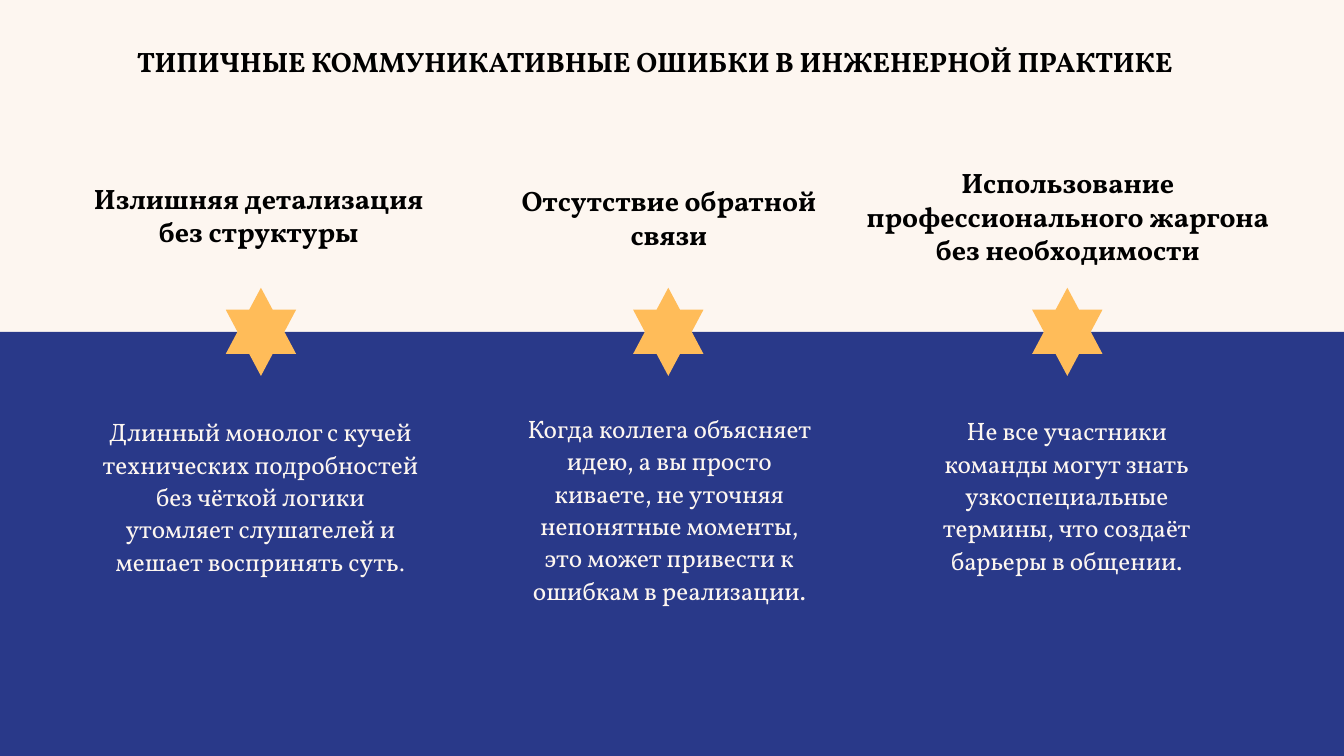
from dataclasses import dataclass

from lxml.etree import SubElement
from pptx import Presentation
from pptx.dml.color import RGBColor
from pptx.enum.shapes import MSO_SHAPE as Preset
from pptx.enum.text import MSO_AUTO_SIZE as AutoSize, PP_ALIGN as Align
from pptx.oxml.ns import qn
from pptx.shapes.autoshape import Shape
from pptx.slide import Slide
from pptx.util import Emu, Pt

EMU_PER_PX = 9525
SLIDE_WIDTH, SLIDE_HEIGHT = 1280, 720
BAND_TOP = 316
STAR_WIDTH, STAR_HEIGHT, STAR_TOP = 67, 84, 274

CREAM = "FDF6F0"
NAVY = "071A79"
GOLD = "FFBC59"
BLACK = "000000"
FONT = "Vollkorn"


@dataclass(frozen=True)
class Box:
    left: int
    top: int
    width: int
    height: int

    def emu(self) -> tuple[Emu, ...]:
        lengths = (self.left, self.top, self.width, self.height)
        return tuple(Emu(length * EMU_PER_PX) for length in lengths)


@dataclass(frozen=True)
class TextStyle:
    size: int
    color: str
    bold: bool
    align: Align
    line_spacing: float = 1.0
    space_after: int = 0


@dataclass(frozen=True)
class Mistake:
    star_left: int
    heading_box: Box
    heading: str
    detail_box: Box
    detail: str
    full_stop_font: str = FONT


TITLE = TextStyle(20, BLACK, True, Align.LEFT, 1.07, 8)
HEADING = TextStyle(20, BLACK, True, Align.CENTER)
DETAIL = TextStyle(18, CREAM, False, Align.CENTER, 1.07, 8)

MISTAKES = [
    Mistake(
        215,
        Box(15, 168, 463, 74),
        "Излишняя детализация\nбез структуры",
        Box(86, 390, 324, 164),
        "Длинный монолог с кучей технических подробностей без чёткой логики "
        "утомляет слушателей и мешает воспринять суть",
        "Times New Roman",
    ),
    Mistake(
        603,
        Box(455, 170, 364, 74),
        "Отсутствие обратной связи",
        Box(491, 387, 293, 195),
        "Когда коллега объясняет идею, а вы просто киваете, не уточняя "
        "непонятные моменты, это может привести к ошибкам в реализации",
    ),
    Mistake(
        983,
        Box(802, 153, 430, 107),
        "Использование профессионального жаргона без необходимости",
        Box(863, 389, 306, 164),
        "Не все участники команды могут знать узкоспециальные термины, "
        "что создаёт барьеры в общении",
    ),
]


def rgb(color: str) -> RGBColor:
    return RGBColor.from_string(color)


def add_filled_shape(slide: Slide, preset: Preset, box: Box, color: str) -> Shape:
    shape = slide.shapes.add_shape(preset, *box.emu())
    shape.shadow.inherit = False
    shape.fill.solid()
    shape.fill.fore_color.rgb = rgb(color)
    shape.line.fill.background()
    return shape


def set_opacity(shape: Shape, percent: int) -> None:
    color = shape.fill._xPr.find(f"{qn('a:solidFill')}/{qn('a:srgbClr')}")
    SubElement(color, qn("a:alpha")).set("val", str(percent * 1000))


def add_text(slide: Slide, box: Box, text: str, style: TextStyle) -> Shape:
    shape = slide.shapes.add_textbox(*box.emu())
    frame = shape.text_frame
    frame.text = text
    frame.word_wrap = True
    frame.auto_size = AutoSize.SHAPE_TO_FIT_TEXT
    for paragraph in frame.paragraphs:
        paragraph.alignment = style.align
        paragraph.line_spacing = style.line_spacing
        paragraph.space_after = Pt(style.space_after)
        for run in paragraph.runs:
            format_run(run, style)
    return shape


def format_run(run, style: TextStyle, font_name: str = FONT) -> None:
    run.font.name = font_name
    run.font.size = Pt(style.size)
    run.font.bold = style.bold
    run.font.color.rgb = rgb(style.color)


def add_mistake(slide: Slide, mistake: Mistake) -> None:
    star_box = Box(mistake.star_left, STAR_TOP, STAR_WIDTH, STAR_HEIGHT)
    add_filled_shape(slide, Preset.STAR_6_POINT, star_box, GOLD)
    add_text(slide, mistake.heading_box, mistake.heading, HEADING)
    detail = add_text(slide, mistake.detail_box, mistake.detail, DETAIL)
    full_stop = detail.text_frame.paragraphs[0].add_run()
    full_stop.text = "."
    format_run(full_stop, DETAIL, mistake.full_stop_font)


def main() -> None:
    presentation = Presentation()
    presentation.slide_width = Emu(SLIDE_WIDTH * EMU_PER_PX)
    presentation.slide_height = Emu(SLIDE_HEIGHT * EMU_PER_PX)
    slide = presentation.slides.add_slide(presentation.slide_layouts[6])
    slide.background.fill.solid()
    slide.background.fill.fore_color.rgb = rgb(CREAM)

    band_box = Box(0, BAND_TOP, SLIDE_WIDTH, SLIDE_HEIGHT - BAND_TOP)
    band = add_filled_shape(slide, Preset.RECTANGLE, band_box, NAVY)
    set_opacity(band, 86)

    add_text(
        slide,
        Box(121, 35, 1038, 43),
        "ТИПИЧНЫЕ КОММУНИКАТИВНЫЕ ОШИБКИ В ИНЖЕНЕРНОЙ ПРАКТИКЕ",
        TITLE,
    )
    for mistake in MISTAKES:
        add_mistake(slide, mistake)

    presentation.save("out.pptx")


if __name__ == "__main__":
    main()
